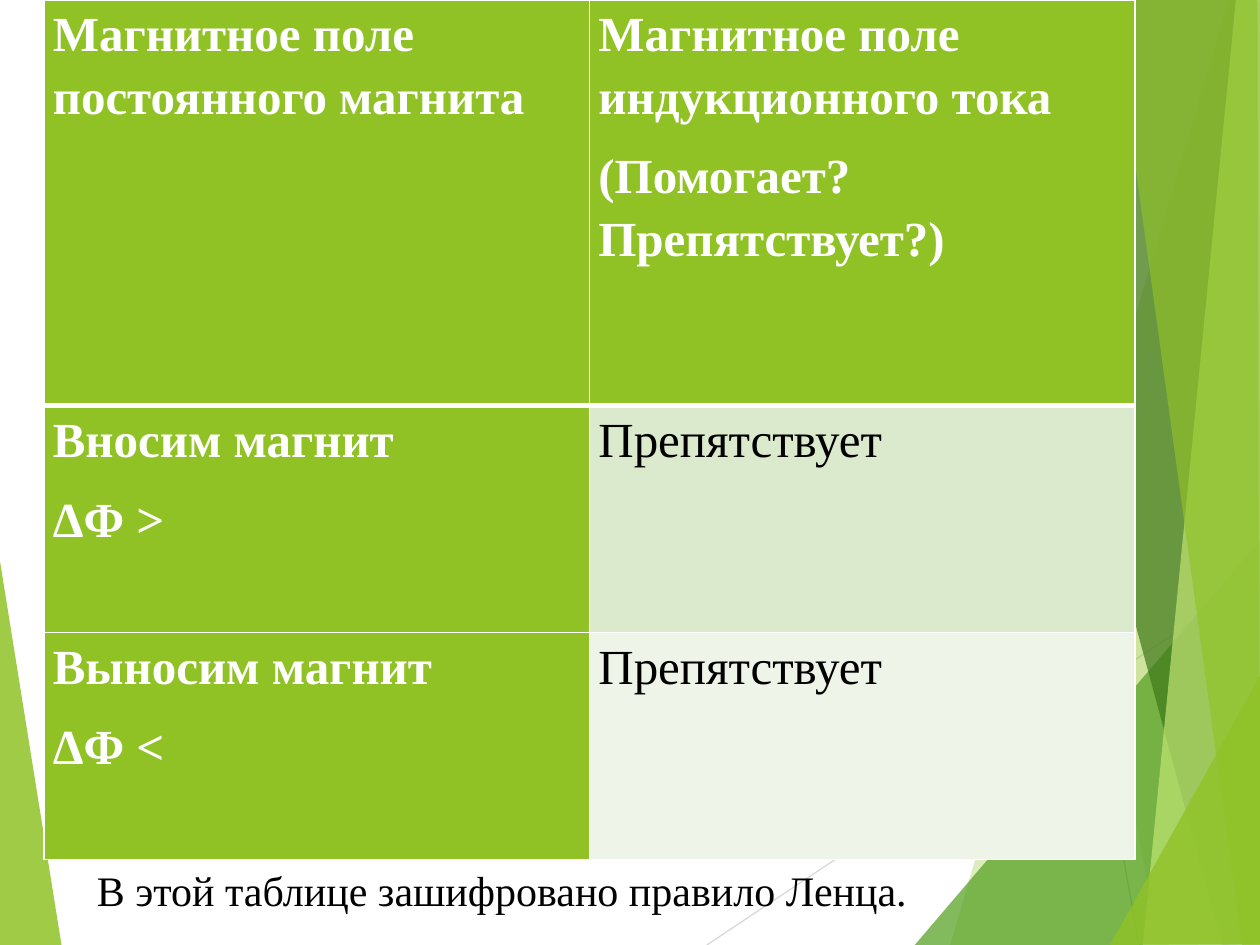
from dataclasses import dataclass

import pptx
import pptx.dml.color
import pptx.enum.shapes
import pptx.enum.text
import pptx.oxml
import pptx.oxml.ns
import pptx.util
from pptx.util import Inches

RGBColor = pptx.dml.color.RGBColor
WHITE = RGBColor(0xFF, 0xFF, 0xFF)
BLACK = RGBColor(0, 0, 0)
LEAF = RGBColor(0x90, 0xC2, 0x26)
GRASS = RGBColor(0x54, 0xA0, 0x21)
FOREST = RGBColor(0x3F, 0x78, 0x19)
LIME = RGBColor(0xC0, 0xE4, 0x74)
PALE = RGBColor(0xDB, 0xE9, 0xCD)
PALEST = RGBColor(0xEE, 0xF4, 0xE8)
LIGHT_GREY = RGBColor(0xD9, 0xD9, 0xD9)
GREY = RGBColor(0xBF, 0xBF, 0xBF)
FONT = "Times New Roman"

Point = tuple[float, float]


@dataclass(frozen=True)
class Facet:
    corners: tuple[Point, ...]
    color: RGBColor
    opacity: int


@dataclass(frozen=True)
class Ray:
    start: Point
    end: Point
    color: RGBColor


@dataclass(frozen=True)
class Entry:
    paragraphs: tuple[str, ...]
    fill: RGBColor = LEAF
    color: RGBColor = WHITE
    bold: bool = True


LEFT_FACET = Facet(((-0.01, 4.39), (0.49, 7.51), (-0.01, 7.5)), LEAF, 85)
RAYS = (
    Ray((5.61, 7.5), (10.01, 4.57), LIGHT_GREY),
    Ray((7.7, 0), (9.04, 7.5), GREY),
)
RIGHT_FACETS = (
    Facet(((9.75, 0), (7.54, 7.5), (10.02, 7.51), (10.01, 0.01)), LEAF, 30),
    Facet(((7.88, -0.01), (9.19, 7.5), (10.01, 7.5), (10.01, -0.01)), LEAF, 20),
    Facet(((7.26, 7.5), (10, 4.29), (10.01, 7.5)), GRASS, 72),
    Facet(((7.67, -0.01), (9.7, 7.5), (10.01, 7.49), (10.01, -0.01)), FOREST, 70),
    Facet(((9.81, -0.01), (9.07, 7.5), (10.01, 7.5), (10, -0.01)), LIME, 70),
    Facet(((8.83, -0.01), (9.86, 7.5), (10, 7.5), (9.98, -0.01)), LEAF, 65),
    Facet(((8.81, 7.5), (10.01, 5.35), (10.01, 7.49)), LEAF, 80),
)
ROW_HEIGHTS = (3.22, 1.8, 1.8)
COLUMN_WIDTH = 4.33
ENTRIES = (
    (
        Entry(("Магнитное поле постоянного магнита",)),
        Entry(("Магнитное поле индукционного тока", "(Помогает? Препятствует?)")),
    ),
    (
        Entry(("Вносим магнит", "ΔΦ >")),
        Entry(("Препятствует",), PALE, BLACK, False),
    ),
    (
        Entry(("Выносим магнит", "ΔΦ <")),
        Entry(("Препятствует",), PALEST, BLACK, False),
    ),
)


def write_text(frame, paragraphs: tuple[str, ...], *, size: float, color: RGBColor,
               bold: bool = False, line_spacing: float = 1.0, space_after: float = 0) -> None:
    for index, words in enumerate(paragraphs):
        paragraph = frame.add_paragraph() if index else frame.paragraphs[0]
        paragraph.line_spacing = line_spacing
        paragraph.space_after = pptx.util.Pt(space_after)
        run = paragraph.add_run()
        run.text = words
        run.font.name = FONT
        run.font.size = pptx.util.Pt(size)
        run.font.bold = bold
        run.font.color.rgb = color


def draw_facet(slide, facet: Facet) -> None:
    start, *rest = [(Inches(x), Inches(y)) for x, y in facet.corners]
    outline = slide.shapes.build_freeform(*start)
    outline.add_line_segments(rest, close=True)
    shard = outline.convert_to_shape()
    shard.shadow.inherit = False
    shard.line.fill.background()
    shard.fill.solid()
    shard.fill.fore_color.rgb = facet.color
    tint = next(shard.element.iter(pptx.oxml.ns.qn("a:srgbClr")))
    alpha = pptx.oxml.parse_xml(
        f'<a:alpha {pptx.oxml.ns.nsdecls("a")} val="{facet.opacity * 1000}"/>')
    tint.append(alpha)


def draw_ray(slide, ray: Ray) -> None:
    connector = slide.shapes.add_connector(
        pptx.enum.shapes.MSO_CONNECTOR.STRAIGHT,
        *(Inches(length) for length in ray.start + ray.end))
    connector.line.color.rgb = ray.color
    connector.line.width = pptx.util.Pt(0.75)
    connector.element.spPr.append(
        pptx.oxml.parse_xml(f'<a:effectLst {pptx.oxml.ns.nsdecls("a")}/>'))


def set_borders(cell, widths: dict[str, float]) -> None:
    properties = cell._tc.get_or_add_tcPr()
    for index, (side, width) in enumerate(widths.items()):
        properties.insert(index, pptx.oxml.parse_xml(
            f'<a:ln{side} {pptx.oxml.ns.nsdecls("a")} w="{pptx.util.Pt(width)}">'
            f'<a:solidFill><a:srgbClr val="{WHITE}"/></a:solidFill></a:ln{side}>'))


def fill_cell(cell, entry: Entry, top: float, bottom: float) -> None:
    cell.margin_left = cell.margin_right = Inches(0.07)
    cell.margin_top = cell.margin_bottom = 0
    cell.fill.solid()
    cell.fill.fore_color.rgb = entry.fill
    set_borders(cell, {"L": 1, "R": 1, "T": top, "B": bottom})
    write_text(cell.text_frame, entry.paragraphs, size=28, color=entry.color,
               bold=entry.bold, line_spacing=1.15, space_after=10)


def draw_table(slide) -> None:
    columns = len(ENTRIES[0])
    table = slide.shapes.add_table(
        len(ENTRIES), columns, Inches(0.35), 0,
        Inches(COLUMN_WIDTH * columns), Inches(sum(ROW_HEIGHTS))).table
    for column in table.columns:
        column.width = Inches(COLUMN_WIDTH)
    for row, (height, entries) in enumerate(zip(ROW_HEIGHTS, ENTRIES)):
        table.rows[row].height = Inches(height)
        for column, entry in enumerate(entries):
            fill_cell(table.cell(row, column), entry,
                      top=3 if row == 1 else 1, bottom=3 if row == 0 else 1)


def draw_conclusion(slide) -> None:
    conclusion = slide.shapes.add_textbox(
        Inches(0.67), Inches(6.81), Inches(6.78), Inches(0.5))
    frame = conclusion.text_frame
    frame.word_wrap = False
    frame.auto_size = pptx.enum.text.MSO_AUTO_SIZE.SHAPE_TO_FIT_TEXT
    frame.vertical_anchor = pptx.enum.text.MSO_ANCHOR.MIDDLE
    write_text(frame, ("В этой таблице зашифровано правило Ленца.",), size=24, color=BLACK)


def main() -> None:
    presentation = pptx.Presentation()
    presentation.slide_width = Inches(10)
    presentation.slide_height = Inches(7.5)
    slide = presentation.slides.add_slide(presentation.slide_layouts[6])
    draw_facet(slide, LEFT_FACET)
    for ray in RAYS:
        draw_ray(slide, ray)
    for facet in RIGHT_FACETS:
        draw_facet(slide, facet)
    draw_table(slide)
    draw_conclusion(slide)
    presentation.save("out.pptx")


if __name__ == "__main__":
    main()
